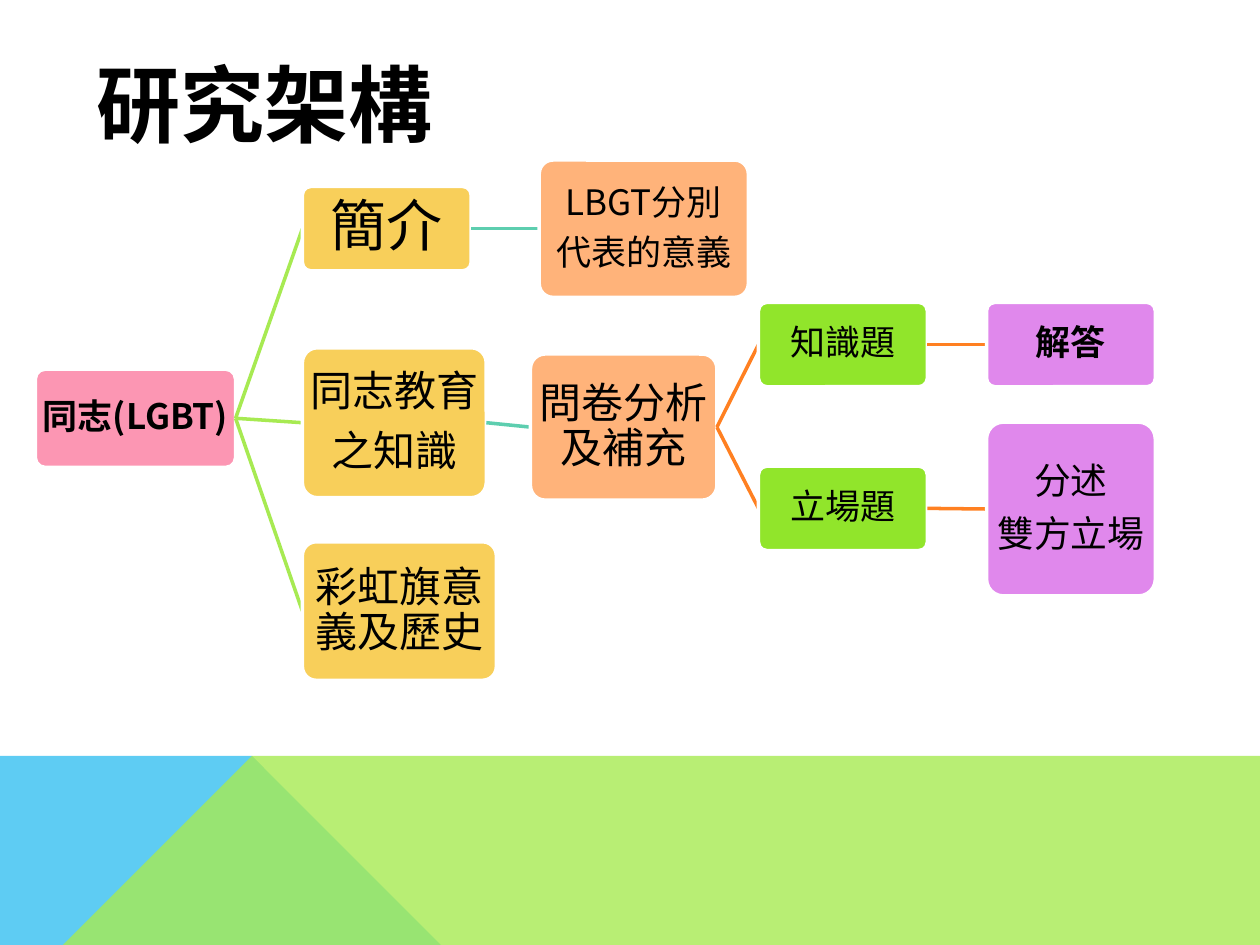
import pptx
import pptx.util
import pptx.dml.color
import pptx.enum.shapes
import pptx.enum.text
import pptx.oxml.ns
from lxml import etree

Inches, Pt = pptx.util.Inches, pptx.util.Pt
qn = pptx.oxml.ns.qn
FONT = "Noto Sans CJK SC"
HEX = {
    "black": "000000", "white": "FFFFFF", "sky": "5ECCF3", "lime": "A7EA52",
    "pink": "FC96B3", "gold": "F8CF5A", "peach": "FFB37A", "leaf": "91E52B",
    "violet": "E088EC", "teal": "5DCEAF", "orange": "FF8021",
}

TITLE = "研究架構"
# fill, opacity in percent, corner points
BANDS = [
    ("sky", 100, [(0, 7.5), (0, 5.52), (2.23, 5.52), (3.91, 7.5)]),
    ("lime", 80, [(0, 7.5), (2.23, 5.52), (10, 5.52), (10, 7.5)]),
]
# name: parent, lines, size, bold, left, top, width, height
NODES = {
    "root": (None, ["同志(LGBT)"], 20, True, 0.28, 2.93, 1.59, 0.78),
    "intro": ("root", ["簡介"], 32, False, 2.4, 1.48, 1.34, 0.67),
    "terms": ("intro", ["LBGT分別", "代表的意義"], 20, False, 4.28, 1.27, 1.66, 1.09),
    "facts": ("root", ["同志教育", "之知識"], 24, False, 2.4, 2.76, 1.46, 1.19),
    "survey": ("facts", ["問卷分析及補充"], 24, False, 4.21, 2.81, 1.48, 1.16),
    "quiz": ("survey", ["知識題"], 20, False, 6.02, 2.4, 1.34, 0.67),
    "answer": ("quiz", ["解答"], 20, True, 7.83, 2.4, 1.34, 0.67),
    "stance": ("survey", ["立場題"], 20, False, 6.02, 3.7, 1.34, 0.67),
    "sides": ("stance", ["分述", "雙方立場"], 21, False, 7.83, 3.35, 1.34, 1.38),
    "flag": ("root", ["彩虹旗意義及歷史"], 24, False, 2.4, 4.3, 1.54, 1.1),
}
FILLS = ["pink", "gold", "peach", "leaf", "violet"]  # by depth
LINES = [None, "lime", "teal", "orange", "orange"]   # into each depth


def color(name):
    return pptx.dml.color.RGBColor.from_string(HEX[name])


def paint(shape, name):
    shape.shadow.inherit = False
    shape.fill.solid()
    shape.fill.fore_color.rgb = color(name)


def style(para, size, bold):
    for run in para.runs:
        run.font.size, run.font.bold, run.font.name = Pt(size), bold, FONT
        run.font.color.rgb = color("black")
        east = etree.SubElement(run.font._element, qn("a:ea"))
        east.set("typeface", FONT)


def depth(name):
    parent = NODES[name][0]
    return 0 if parent is None else 1 + depth(parent)


deck = pptx.Presentation()
deck.slide_width, deck.slide_height = Inches(10), Inches(7.5)
slide = deck.slides.add_slide(deck.slide_layouts[6])
shapes = slide.shapes

# Coloured bands at the foot
for name, alpha, points in BANDS:
    pen = shapes.build_freeform(*points[0], scale=Inches(1))
    pen.add_line_segments(points[1:], close=True)
    band = pen.convert_to_shape()
    paint(band, name)
    band.line.fill.background()
    if alpha < 100:
        tone = band._element.spPr.find(qn("a:solidFill"))[0]
        etree.SubElement(tone, qn("a:alpha")).set("val", str(alpha * 1000))

# Title
title = shapes.add_textbox(Inches(0.67), Inches(0.52), Inches(8.22), Inches(0.6))
frame = title.text_frame
frame.word_wrap = True
frame.vertical_anchor = pptx.enum.text.MSO_ANCHOR.MIDDLE
frame.text = TITLE
style(frame.paragraphs[0], 48, True)

# Tree: each link lies under the box it leads to
boxes = {}
for name, (parent, lines, size, bold, *place) in NODES.items():
    level = depth(name)
    link = None
    if parent:
        link = shapes.add_connector(pptx.enum.shapes.MSO_CONNECTOR.STRAIGHT, 0, 0, 0, 0)
        link.line.color.rgb = color(LINES[level])
        link.line.width = Pt(2)
        etree.SubElement(link._element.spPr, qn("a:effectLst"))
    box = shapes.add_shape(pptx.enum.shapes.MSO_SHAPE.ROUNDED_RECTANGLE,
                           *[Inches(v) for v in place])
    box.adjustments[0] = 0.1
    paint(box, FILLS[level])
    box.line.color.rgb = color("white")
    box.line.width = Pt(2)
    boxes[name] = box
    if link:
        link.begin_connect(boxes[parent], 3)
        link.end_connect(box, 1)

    frame = box.text_frame
    frame.word_wrap = True
    frame.vertical_anchor = pptx.enum.text.MSO_ANCHOR.MIDDLE
    frame.margin_left = frame.margin_right = Inches(0.02)
    frame.margin_top = frame.margin_bottom = Inches(0.02)
    frame.text = "\n".join(lines)
    for para in frame.paragraphs:
        para.alignment = pptx.enum.text.PP_ALIGN.CENTER
        para.line_spacing = 0.9
        para.space_after = Pt(size * 0.35)
        style(para, size, bold)

deck.save("out.pptx")
